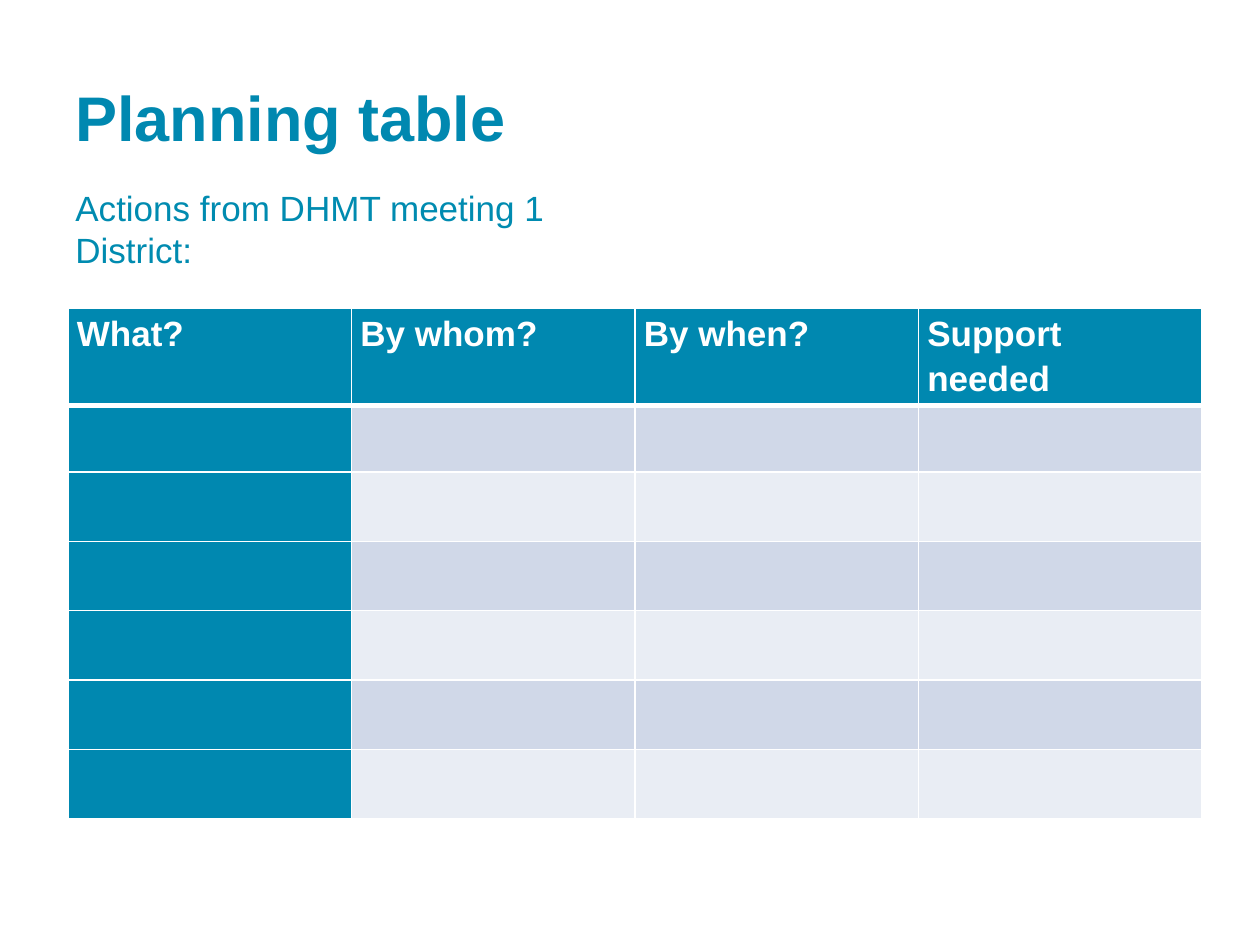
import dataclasses

import pptx
import pptx.dml.color
import pptx.enum.text
import pptx.oxml
import pptx.oxml.ns
import pptx.util

Inches = pptx.util.Inches
Pt = pptx.util.Pt


@dataclasses.dataclass(frozen=True)
class Theme:
    font: str = "Arial"
    teal: str = "0088B0"
    sub: str = "008BB0"
    white: str = "FFFFFF"
    bands: tuple = ("D0D8E8", "E9EDF4")
    title: int = 36
    body: int = 20


THEME = Theme()
HEADS = ("What?", "By whom?", "By when?", "Support needed")
ROWS = (0.7, 0.53) + (0.55,) * 5


def color(code):
    return pptx.dml.color.RGBColor.from_string(code)


def add_run(para, text, size, code, bold=False):
    run = para.add_run()
    run.text = text
    font = run.font
    font.name, font.size, font.bold = THEME.font, Pt(size), bold
    font.color.rgb = color(code)


def add_text(slide, box, lines, size, code, bold=False, top=0.05, base=0.05):
    """Add a wrapped text box with one paragraph for each line."""
    frame = slide.shapes.add_textbox(*map(Inches, box)).text_frame
    frame.word_wrap = True
    frame.vertical_anchor = pptx.enum.text.MSO_ANCHOR.MIDDLE
    frame.margin_top, frame.margin_bottom = Inches(top), Inches(base)
    for i, line in enumerate(lines):
        para = frame.add_paragraph() if i else frame.paragraphs[0]
        add_run(para, line, size, code, bold)


def set_edges(cell, base):
    """Draw white borders; base is the width of the bottom one."""
    props = cell._tc.get_or_add_tcPr()
    for i, (side, width) in enumerate((("L", 1), ("R", 1), ("T", 1), ("B", base))):
        props.insert(i, pptx.oxml.parse_xml(
            f'<a:ln{side} {pptx.oxml.ns.nsdecls("a")} w="{Pt(width)}">'
            f'<a:solidFill><a:srgbClr val="{THEME.white}"/></a:solidFill>'
            f'</a:ln{side}>'))


def fill_head(cell, text):
    cell.margin_left = cell.margin_right = Inches(0.07)
    cell.margin_top = cell.margin_bottom = 0
    para = cell.text_frame.paragraphs[0]
    para.line_spacing, para.space_after = 1.15, Pt(10)
    add_run(para, text, THEME.body, THEME.white, True)


def add_plan(slide):
    box = map(Inches, (0.54, 2.45, 9, sum(ROWS)))
    table = slide.shapes.add_table(len(ROWS), len(HEADS), *box).table
    table.first_col = True
    for r, height in enumerate(ROWS):
        table.rows[r].height = Inches(height)
        for c, head in enumerate(HEADS):
            cell = table.cell(r, c)
            solid = r == 0 or c == 0
            cell.fill.solid()
            cell.fill.fore_color.rgb = color(
                THEME.teal if solid else THEME.bands[(r - 1) % 2])
            # A thick rule parts the header from the body
            set_edges(cell, 3 if r == 0 else 1)
            if r == 0:
                fill_head(cell, head)
    # The rule is shared with the first body row
    for cell in table.rows[1].cells:
        edge = cell._tc.tcPr.find(pptx.oxml.ns.qn("a:lnT"))
        edge.set("w", str(Pt(3)))


def main():
    deck = pptx.Presentation()
    deck.slide_width, deck.slide_height = Inches(10), Inches(7.5)
    slide = deck.slides.add_slide(deck.slide_layouts[6])

    # Title
    add_text(slide, (0.5, 0.3, 9, 1.25), ["Planning table"],
             THEME.title, THEME.teal, True)
    # Action table
    add_plan(slide)
    # Subtitle, set high in its box
    add_text(slide, (0.5, 1.14, 6.04, 1.31),
             ["Actions from DHMT meeting 1", "District:"],
             THEME.body, THEME.sub, top=0.33, base=0.3)

    deck.save("out.pptx")


if __name__ == "__main__":
    main()
